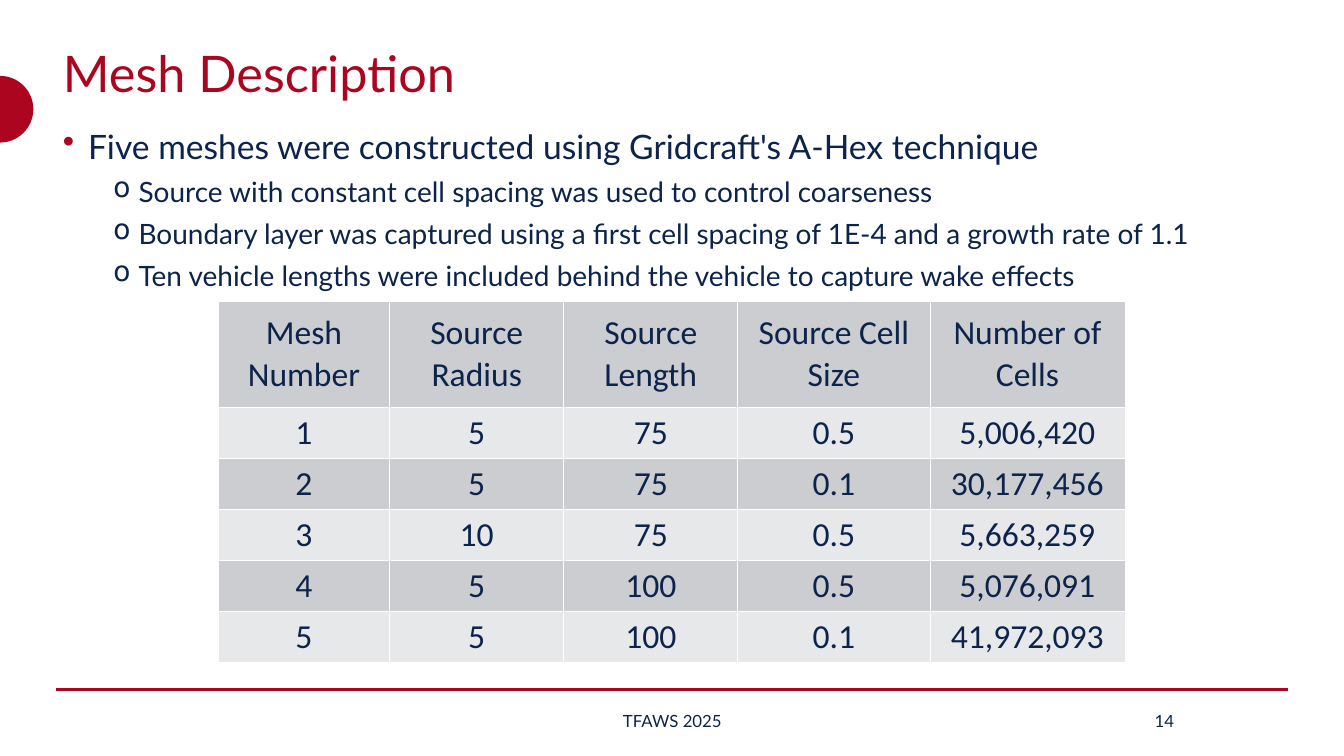
"""Build the mesh description slide with its bullets, mesh table and footer."""
from math import cos, pi, sin
from typing import NamedTuple

from lxml.etree import SubElement
from pptx import Presentation
from pptx.dml.color import RGBColor
from pptx.enum.shapes import MSO_CONNECTOR
from pptx.enum.text import MSO_ANCHOR, PP_ALIGN
from pptx.oxml.ns import qn
from pptx.util import Cm, Pt

RED, NAVY, WHITE = "AB0520", "0C234B", "FFFFFF"
BANDS = ("CCCDD0", "E7E8E9")
COLUMN_WIDTHS = (6.48, 6.58, 6.58, 7.26, 7.37)
HEADER_HEIGHT, ROW_HEIGHT = 4.01, 1.93
MESHES = (
    ("Mesh Number", "Source Radius", "Source Length", "Source Cell Size", "Number of Cells"),
    ("1", "5", "75", "0.5", "5,006,420"),
    ("2", "5", "75", "0.1", "30,177,456"),
    ("3", "10", "75", "0.5", "5,663,259"),
    ("4", "5", "100", "0.5", "5,076,091"),
    ("5", "5", "100", "0.1", "41,972,093"),
)


class Line(NamedTuple):
    text: str
    size: float
    color: str = NAVY
    font: str = "Lato"
    level: int = 0
    bullet: str = ""
    bullet_color: str = NAVY
    indent: float = 0
    format: dict = {}


class Box(NamedTuple):
    left: float
    top: float
    width: float
    height: float
    lines: tuple
    anchor: MSO_ANCHOR = MSO_ANCHOR.MIDDLE


def detail(text: str) -> Line:
    return Line(text, 30, level=1, bullet="o", indent=2.86, format={"space_after": Pt(9)})


BOXES = (
    Box(2.13, 1.52, 46.53, 2.69,
        (Line("Mesh Description", 54, RED, format={"line_spacing": 0.9}),)),
    Box(2.13, 4.62, 46.53, 21.34, (
        Line("Five meshes were constructed using Gridcraft's A-Hex technique", 36, bullet="•",
             bullet_color=RED, indent=0.95, format={"space_after": Pt(9)}),
        detail("Source with constant cell spacing was used to control coarseness"),
        detail("Boundary layer was captured using a first cell spacing of 1E-4 and a growth rate of 1.1"),
        detail("Ten vehicle lengths were included behind the vehicle to capture wake effects"),
    ), MSO_ANCHOR.TOP),
    Box(10.39, 26.49, 30.05, 1.52,
        (Line("TFAWS 2025", 18, format={"alignment": PP_ALIGN.CENTER}),)),
    Box(41.43, 26.49, 3.2, 1.52,
        (Line("14", 18, format={"alignment": PP_ALIGN.RIGHT}),)),
)


def rgb(value: str) -> RGBColor:
    return RGBColor.from_string(value)


def set_attributes(target, values: dict) -> None:
    for name, value in values.items():
        setattr(target, name, value)


def add_bullet(paragraph, line: Line) -> None:
    properties = paragraph._p.get_or_add_pPr()
    properties.set("marL", str(Cm(line.indent)))
    properties.set("indent", str(-Cm(0.95)))
    color = SubElement(properties, qn("a:buClr"))
    SubElement(color, qn("a:srgbClr"), val=line.bullet_color)
    SubElement(properties, qn("a:buChar"), char=line.bullet)


def write_line(paragraph, line: Line) -> None:
    if line.bullet:
        add_bullet(paragraph, line)
    set_attributes(paragraph, {"level": line.level, **line.format})
    run = paragraph.add_run()
    run.text = line.text
    set_attributes(run.font, {"size": Pt(line.size), "name": line.font})
    run.font.color.rgb = rgb(line.color)


def add_text(slide, box: Box) -> None:
    shape = slide.shapes.add_textbox(Cm(box.left), Cm(box.top), Cm(box.width), Cm(box.height))
    frame = shape.text_frame
    set_attributes(frame, {"word_wrap": True, "vertical_anchor": box.anchor})
    for index, line in enumerate(box.lines):
        write_line(frame.add_paragraph() if index else frame.paragraphs[0], line)


def add_half_disc(slide, center_y: float, radius: float, steps: int = 40) -> None:
    angles = [pi * step / steps - pi / 2 for step in range(steps + 1)]
    points = [(Cm(radius * cos(angle)), Cm(center_y + radius * sin(angle))) for angle in angles]
    builder = slide.shapes.build_freeform(*points[0])
    builder.add_line_segments(points[1:], close=True)
    shape = builder.convert_to_shape()
    shape.shadow.inherit = False
    shape.fill.solid()
    shape.fill.fore_color.rgb = rgb(RED)
    shape.line.fill.background()


def add_rule(slide, left: float, right: float, top: float) -> None:
    connector = slide.shapes.add_connector(
        MSO_CONNECTOR.STRAIGHT, Cm(left), Cm(top), Cm(right), Cm(top))
    connector.line.color.rgb = rgb(RED)
    connector.line.width = Pt(3)
    SubElement(connector._element.spPr, qn("a:effectLst"))


def add_borders(cell) -> None:
    properties = cell._tc.get_or_add_tcPr()
    for side in ("lnL", "lnR", "lnT", "lnB"):
        border = SubElement(properties, qn(f"a:{side}"), w=str(Pt(1)))
        fill = SubElement(border, qn("a:solidFill"))
        SubElement(fill, qn("a:srgbClr"), val=WHITE)


def add_mesh_table(slide, left: float, top: float) -> None:
    heights = (HEADER_HEIGHT,) + (ROW_HEIGHT,) * (len(MESHES) - 1)
    table = slide.shapes.add_table(
        len(MESHES), len(COLUMN_WIDTHS), Cm(left), Cm(top),
        Cm(sum(COLUMN_WIDTHS)), Cm(sum(heights))).table
    set_attributes(table, {"first_row": False, "horz_banding": False})
    for column, width in zip(table.columns, COLUMN_WIDTHS):
        column.width = Cm(width)
    cell_format = {"vertical_anchor": MSO_ANCHOR.MIDDLE, "margin_left": 0,
                   "margin_right": 0, "margin_top": 0, "margin_bottom": 0}
    for index, (row, height, texts) in enumerate(zip(table.rows, heights, MESHES)):
        row.height = Cm(height)
        for cell, text in zip(row.cells, texts):
            add_borders(cell)
            set_attributes(cell, cell_format)
            cell.fill.solid()
            cell.fill.fore_color.rgb = rgb(BANDS[index % 2])
            write_line(cell.text_frame.paragraphs[0],
                       Line(text, 36, font="Calibri", format={"alignment": PP_ALIGN.CENTER}))


def main() -> None:
    presentation = Presentation()
    set_attributes(presentation, {"slide_width": Cm(50.8), "slide_height": Cm(28.58)})
    slide = presentation.slides.add_slide(presentation.slide_layouts[6])
    slide.background.fill.solid()
    slide.background.fill.fore_color.rgb = rgb(WHITE)
    add_half_disc(slide, 4.13, 1.26)
    add_rule(slide, 2.13, 48.67, 26.06)
    for box in BOXES:
        add_text(slide, box)
    add_mesh_table(slide, 8.25, 11.38)
    presentation.save("out.pptx")


if __name__ == "__main__":
    main()
